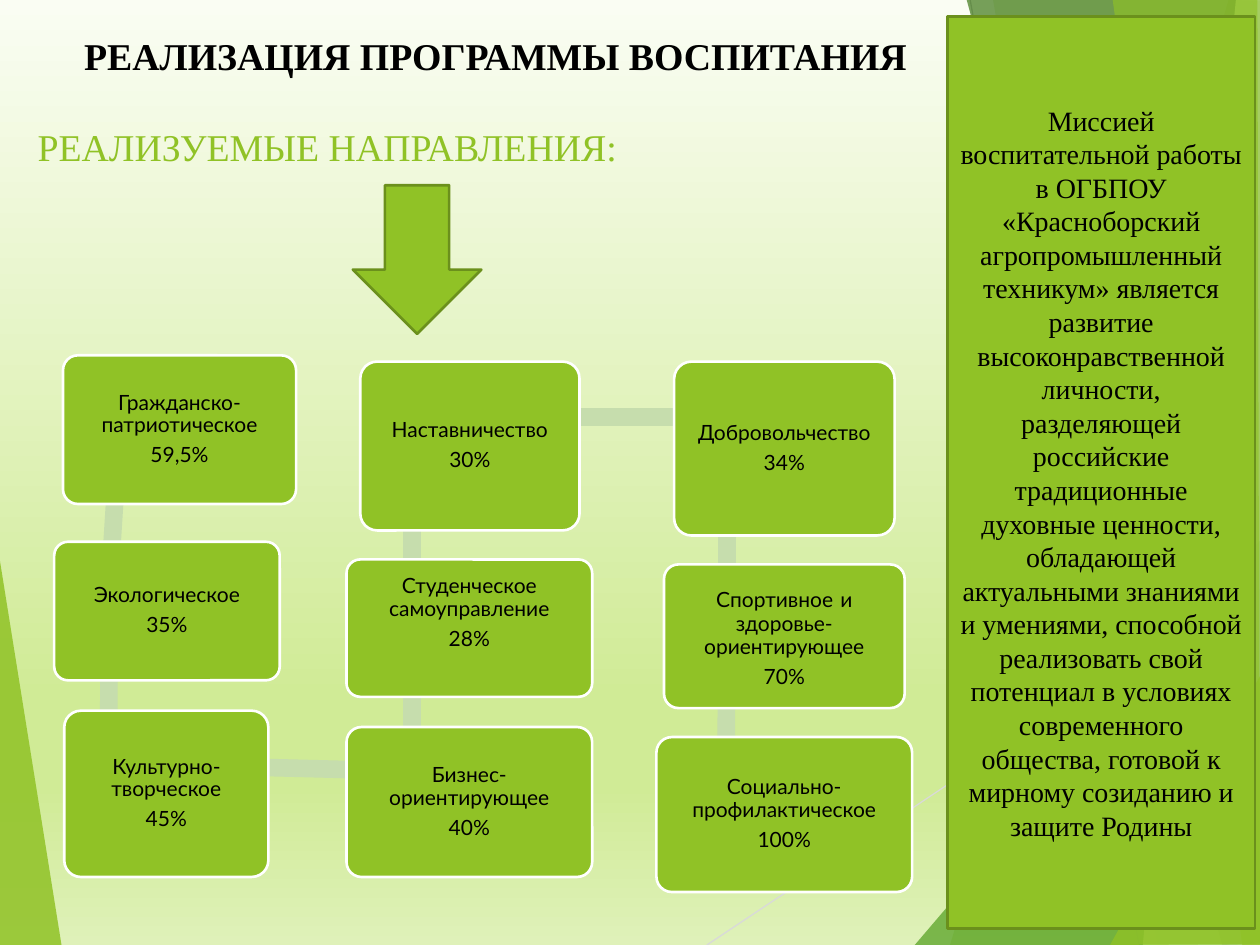
from math import atan2, degrees, hypot

from lxml import etree
from pptx import Presentation
from pptx.dml.color import RGBColor
from pptx.enum.shapes import MSO_CONNECTOR, MSO_SHAPE
from pptx.enum.text import MSO_ANCHOR, PP_ALIGN
from pptx.oxml import parse_xml
from pptx.oxml.ns import nsdecls, qn
from pptx.util import Inches, Pt

RECT, ROUNDED, ARROW = MSO_SHAPE.RECTANGLE, MSO_SHAPE.ROUNDED_RECTANGLE, MSO_SHAPE.DOWN_ARROW
STRAIGHT = MSO_CONNECTOR.STRAIGHT
CENTER, LEFT, MIDDLE, TOP = PP_ALIGN.CENTER, PP_ALIGN.LEFT, MSO_ANCHOR.MIDDLE, MSO_ANCHOR.TOP

GREEN = RGBColor(0x90, 0xC2, 0x26)
DARK_GREEN = RGBColor(0x6B, 0x90, 0x1C)
LEAF = RGBColor(0x54, 0xA0, 0x21)
FOREST = RGBColor(0x3F, 0x78, 0x19)
LIME = RGBColor(0xC0, 0xE4, 0x74)
PALE_GREEN = RGBColor(0xC6, 0xDD, 0xAD)
LIGHT_GRAY = RGBColor(0xD9, 0xD9, 0xD9)
GRAY = RGBColor(0xBF, 0xBF, 0xBF)
BLACK = RGBColor(0, 0, 0)
WHITE = RGBColor(0xFF, 0xFF, 0xFF)

SERIF, SANS = "Times New Roman", "Lato"
GRADIENT = [(0, "FAFDF3"), (74, "D0EB96"), (83, "D0EB96"), (100, "DFF1B9")]

RAYS = [((5.61, 7.5), (10.01, 4.57), LIGHT_GRAY), ((7.7, 0), (9.04, 7.5), GRAY)]
FACETS = [
    ([(9.75, 0), (7.54, 7.5), (10.02, 7.51), (10.01, 0.01)], GREEN, 30),
    ([(7.88, -0.01), (9.19, 7.5), (10.01, 7.5), (10.01, -0.01)], GREEN, 20),
    ([(7.26, 7.5), (10, 4.29), (10.01, 7.5)], LEAF, 72),
    ([(7.67, -0.01), (9.7, 7.5), (10.01, 7.49), (10.01, -0.01)], FOREST, 70),
    ([(9.81, -0.01), (9.07, 7.5), (10.01, 7.5), (10, -0.01)], LIME, 70),
    ([(8.83, -0.01), (9.86, 7.5), (10, 7.5), (9.98, -0.01)], GREEN, 65),
    ([(8.81, 7.5), (10.01, 5.35), (10.01, 7.49)], GREEN, 80),
]
LEFT_FACET = ([(-0.01, 4.39), (0.49, 7.51), (-0.01, 7.5)], GREEN, 85)

CHAIN = [(0.96, 3.19), (0.87, 4.62), (0.86, 6.06), (3.27, 6.12), (3.27, 4.75),
         (3.27, 3.31), (5.77, 3.31), (5.77, 4.8), (5.76, 6.22)]
CARDS = [
    ((0.5, 2.82, 1.85, 1.18), [("Гражданско-патриотическое", 12)], "59,5%", 0.09),
    ((0.43, 4.3, 1.79, 1.1), [("Экологическое", 12)], "35%", 0.09),
    ((0.51, 5.64, 1.62, 1.32), [("Культурно-творческое", 12)], "45%", 0.09),
    ((2.75, 5.77, 1.95, 1.19), [("Бизнес-ориентирующее", 12)], "40%", 0.09),
    ((2.75, 4.44, 1.95, 1.09), [("Студенческое самоуправление", 12)], "28%", 0.33),
    ((2.86, 2.87, 1.74, 1.34), [("Наставничество", 12)], "30%", 0.09),
    ((5.35, 2.87, 1.75, 1.38), [("Добровольчество", 12)], "34%", 0.09),
    ((5.27, 4.48, 1.91, 1.14),
     [("Спортивное", 12), (" ", 16), ("и здоровье-ориентирующее", 12)], "70%", 0.09),
    ((5.21, 5.85, 2.03, 1.23), [("Социально-профилактическое", 12)], "100%", 0.09),
]
MISSION = (
    "Миссией воспитательной работы в ОГБПОУ «Красноборский агропромышленный техникум» "
    "является развитие высоконравственной личности, разделяющей российские традиционные "
    "духовные ценности, обладающей актуальными знаниями и умениями, способной реализовать "
    "свой потенциал в условиях современного общества, готовой к мирному созиданию и защите Родины"
)


def add_box(s, kind, box, fill, line=None):
    """Add a preset shape with a flat fill and an optional outline."""
    sp = s.shapes.add_shape(kind, *map(Inches, box))
    sp.shadow.inherit = False
    sp.fill.solid()
    sp.fill.fore_color.rgb = fill
    if line is None:
        sp.line.fill.background()
    else:
        sp.line.color.rgb = line
        sp.line.width = Pt(1.5)
    return sp


def add_run(p, text, size, font, color=BLACK, bold=False):
    """Append one formatted run to a paragraph."""
    r = p.add_run()
    r.text = text
    r.font.size, r.font.name, r.font.bold = Pt(size), font, bold
    r.font.color.rgb = color


def add_facet(s, points, color, alpha):
    """Add a translucent polygon."""
    points = [(Inches(x), Inches(y)) for x, y in points]
    builder = s.shapes.build_freeform(*points[0])
    builder.add_line_segments(points[1:], close=True)
    sp = builder.convert_to_shape()
    sp.shadow.inherit = False
    sp.fill.solid()
    sp.fill.fore_color.rgb = color
    sp.line.fill.background()
    clr = sp.fill._xPr.find(".//" + qn("a:srgbClr"))
    etree.SubElement(clr, qn("a:alpha")).set("val", str(alpha * 1000))


def add_backdrop(s):
    """Set the gradient background and draw the facets and thin rays."""
    stops = "".join(f'<a:gs pos="{pos * 1000}"><a:srgbClr val="{c}"/></a:gs>'
                    for pos, c in GRADIENT)
    s._element.cSld.insert(0, parse_xml(
        f'<p:bg {nsdecls("p", "a")}><p:bgPr><a:gradFill><a:gsLst>{stops}</a:gsLst>'
        '<a:lin ang="5400000"/></a:gradFill><a:effectLst/></p:bgPr></p:bg>'))
    add_facet(s, *LEFT_FACET)
    for start, end, color in RAYS:
        ray = s.shapes.add_connector(STRAIGHT, *map(Inches, start + end))
        ray.line.color.rgb = color
        ray.line.width = Pt(0.75)
        etree.SubElement(ray._element.spPr, qn("a:effectLst"))
    for facet in FACETS:
        add_facet(s, *facet)


def add_heading(s, box):
    """Write the slide title and the subheading under it."""
    tf = s.shapes.add_textbox(*map(Inches, box)).text_frame
    tf.word_wrap = True
    tf.vertical_anchor = TOP
    p = tf.paragraphs[0]
    p.alignment = LEFT
    p.space_after = Pt(26)
    p._p.get_or_add_pPr().set("marL", str(Inches(0.37)))
    add_run(p, "РЕАЛИЗАЦИЯ ПРОГРАММЫ ВОСПИТАНИЯ", 21.6, SERIF, bold=True)
    p = tf.add_paragraph()
    add_run(p, "РЕАЛИЗУЕМЫЕ НАПРАВЛЕНИЯ:", 21.6, SERIF, GREEN)


def add_bar(s, start, end, thickness=0.14):
    """Join two points of the chain with a turned bar."""
    (x1, y1), (x2, y2) = start, end
    length = hypot(x2 - x1, y2 - y1)
    box = ((x1 + x2 - length) / 2, (y1 + y2 - thickness) / 2, length, thickness)
    add_box(s, RECT, box, PALE_GREEN).rotation = degrees(atan2(y2 - y1, x2 - x1))


def add_card(s, box, name, share, bottom):
    """Draw one direction card with its name and share."""
    sp = add_box(s, ROUNDED, box, GREEN, WHITE)
    sp.adjustments[0] = 0.1
    tf = sp.text_frame
    tf.word_wrap = True
    tf.vertical_anchor = MIDDLE
    tf.margin_left = tf.margin_right = tf.margin_top = Inches(0.09)
    tf.margin_bottom = Inches(bottom)
    for p, runs in ((tf.paragraphs[0], name), (tf.add_paragraph(), [(share, 12)])):
        p.alignment = CENTER
        p.line_spacing = 0.9
        p.space_after = Pt(4.2)
        for text, size in runs:
            add_run(p, text, size, SANS)


def add_directions(s):
    """Draw the chain of bars and the cards on it."""
    for start, end in zip(CHAIN, CHAIN[1:]):
        add_bar(s, start, end)
    for card in CARDS:
        add_card(s, *card)


def add_mission(s, box):
    """Draw the side panel with the mission statement."""
    tf = add_box(s, RECT, box, GREEN, DARK_GREEN).text_frame
    tf.word_wrap = True
    tf.vertical_anchor = MIDDLE
    p = tf.paragraphs[0]
    p.alignment = CENTER
    add_run(p, MISSION, 16, SERIF)


def main():
    """Build and save the slide."""
    prs = Presentation()
    prs.slide_width, prs.slide_height = Inches(10), Inches(7.5)
    s = prs.slides.add_slide(prs.slide_layouts[6])
    add_backdrop(s)
    add_heading(s, (0.2, 0.21, 7.56, 1.26))
    add_directions(s)
    add_box(s, ARROW, (2.8, 1.47, 1.02, 1.18), GREEN, DARK_GREEN)
    add_mission(s, (7.52, 0.13, 2.44, 7.24))
    prs.save("out.pptx")


if __name__ == "__main__":
    main()
